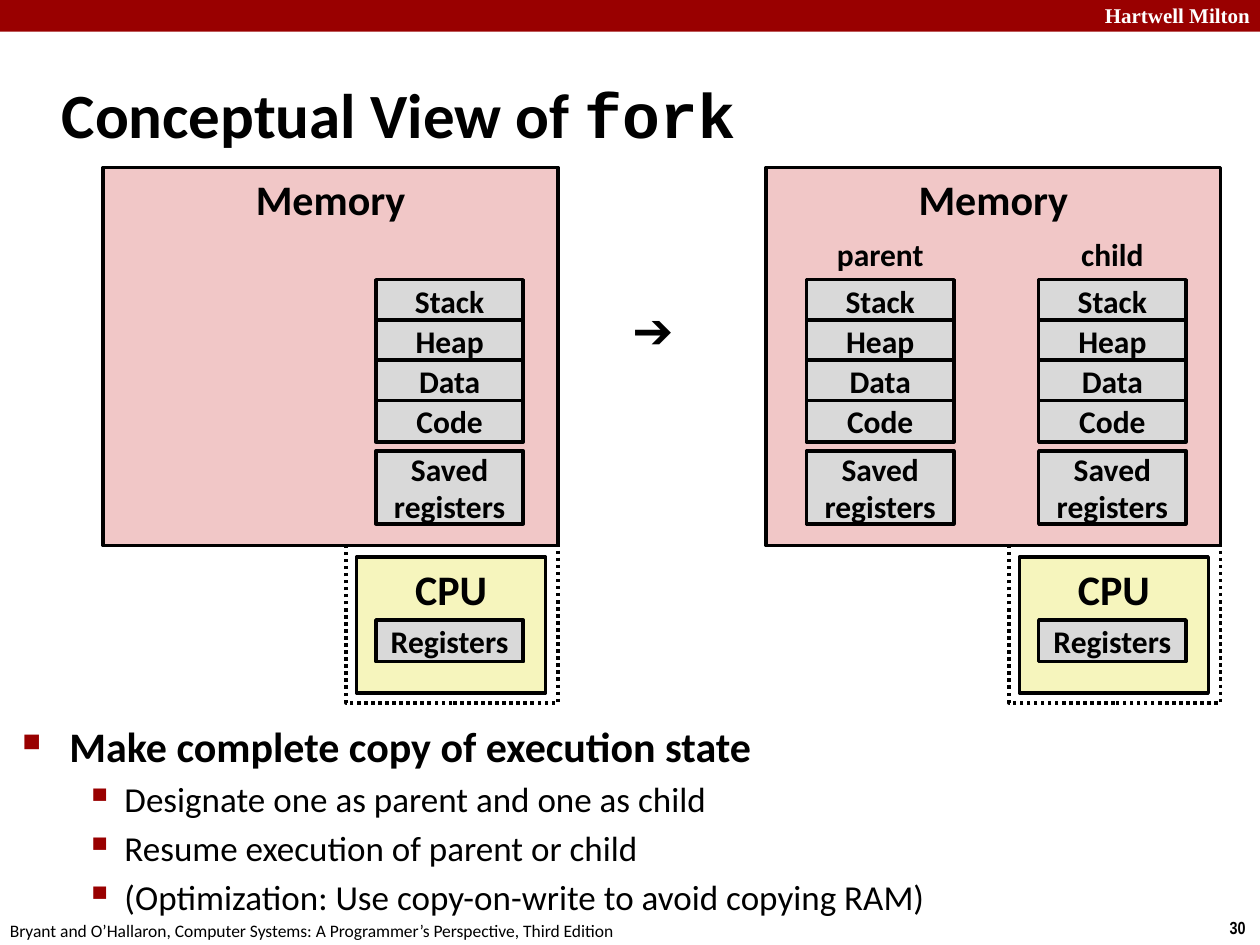
from dataclasses import dataclass

from lxml.etree import SubElement
from pptx import Presentation
from pptx.dml.color import RGBColor
from pptx.enum.dml import MSO_LINE
from pptx.enum.shapes import MSO_SHAPE
from pptx.enum.text import MSO_ANCHOR, MSO_AUTO_SIZE, PP_ALIGN
from pptx.oxml.ns import qn
from pptx.util import Cm, Pt


@dataclass(frozen=True)
class Theme:
    black: str = "000000"
    white: str = "FFFFFF"
    accent: str = "990000"
    memory: str = "F1C7C7"
    processor: str = "F6F5BD"
    segment: str = "D9D9D9"
    font: str = "Calibri"
    code_font: str = "Courier New"
    banner_font: str = "Times New Roman"
    number_font: str = "Arial Narrow"
    symbol_font: str = "Arial"
    title_size: int = 36
    arrow_size: int = 28
    heading_size: int = 24
    point_size: int = 20
    label_size: int = 18
    banner_size: int = 12
    footer_size: int = 10
    outline: int = 2


THEME = Theme()


def add_text(paragraph, text, size=THEME.label_size, font=THEME.font,
             color=THEME.black, bold=True, align=PP_ALIGN.LEFT):
    paragraph.alignment = align
    run = paragraph.add_run()
    run.text = text
    run.font.size = Pt(size)
    run.font.name = font
    run.font.bold = bold
    run.font.color.rgb = RGBColor.from_string(color)


class SlideBuilder:
    def __init__(self, slide, theme):
        self.slide = slide
        self.theme = theme

    def title(self, left, top, width, height, parts):
        shape = self.slide.shapes.title
        shape.left, shape.top = Cm(left), Cm(top)
        shape.width, shape.height = Cm(width), Cm(height)
        frame = shape.text_frame
        frame.auto_size = MSO_AUTO_SIZE.NONE
        frame.vertical_anchor = MSO_ANCHOR.MIDDLE
        for text, font in parts:
            add_text(frame.paragraphs[0], text, size=self.theme.title_size, font=font)

    def box(self, left, top, width, height, text="", fill=None, line=True,
            dotted=False, anchor=MSO_ANCHOR.MIDDLE, group=None, **style):
        shapes = (group or self.slide).shapes
        shape = shapes.add_shape(MSO_SHAPE.RECTANGLE, Cm(left), Cm(top), Cm(width), Cm(height))
        shape.shadow.inherit = False
        if fill:
            shape.fill.solid()
            shape.fill.fore_color.rgb = RGBColor.from_string(fill)
        else:
            shape.fill.background()
        if line:
            shape.line.color.rgb = RGBColor.from_string(self.theme.black)
            shape.line.width = Pt(self.theme.outline)
            if dotted:
                shape.line.dash_style = MSO_LINE.ROUND_DOT
        else:
            shape.line.fill.background()
        if text:
            shape.text_frame.word_wrap = True
            shape.text_frame.vertical_anchor = anchor
            add_text(shape.text_frame.paragraphs[0], text, align=PP_ALIGN.CENTER, **style)

    def label(self, left, top, width, height, text, wrap=True, **style):
        shape = self.slide.shapes.add_textbox(Cm(left), Cm(top), Cm(width), Cm(height))
        shape.text_frame.word_wrap = wrap
        add_text(shape.text_frame.paragraphs[0], text, **style)

    def bullet(self, paragraph, symbol, scale, margin, hanging):
        properties = paragraph._p.get_or_add_pPr()
        properties.set("marL", str(Cm(margin)))
        properties.set("indent", str(-Cm(hanging)))
        color = SubElement(properties, qn("a:buClr"))
        SubElement(color, qn("a:srgbClr"), val=self.theme.accent)
        SubElement(properties, qn("a:buSzPct"), val=str(scale * 1000))
        SubElement(properties, qn("a:buChar"), char=symbol)

    def outline(self, left, top, width, height, heading, points):
        theme = self.theme
        shape = self.slide.shapes.add_textbox(Cm(left), Cm(top), Cm(width), Cm(height))
        frame = shape.text_frame
        frame.word_wrap = True
        paragraph = frame.paragraphs[0]
        paragraph.space_before = Pt(theme.heading_size * 0.2)
        add_text(paragraph, heading, size=theme.heading_size)
        self.bullet(paragraph, "■", 60, 0.95, 0.95)
        for point in points:
            paragraph = frame.add_paragraph()
            paragraph.level = 1
            paragraph.space_before = Pt(theme.point_size * 0.2)
            add_text(paragraph, point, size=theme.point_size, bold=False)
            self.bullet(paragraph, "▪", 110, 2.06, 0.79)

    def process(self, left):
        group = self.slide.shapes.add_group_shape()
        for row, segment in enumerate(("Stack", "Heap", "Data", "Code")):
            self.box(left, 5.64 + row * 0.81, 2.97, 0.84, segment,
                     fill=self.theme.segment, group=group)
        self.box(left, 9.09, 2.97, 1.47, "Saved registers",
                 fill=self.theme.segment, group=group)

    def machine(self, left, process_offsets):
        theme = self.theme
        heading = {"size": theme.heading_size, "anchor": MSO_ANCHOR.TOP}
        self.box(left + 4.9, 4.62, 4.27, 9.55, dotted=True)
        self.box(left + 5.11, 11.23, 3.81, 2.74, "CPU", fill=theme.processor, **heading)
        self.box(left + 5.5, 12.5, 2.97, 0.84, "Registers", fill=theme.segment)
        self.box(left, 3.38, 9.17, 7.62, "Memory", fill=theme.memory, **heading)
        for offset in process_offsets:
            self.process(left + offset)


def main():
    presentation = Presentation()
    presentation.slide_width, presentation.slide_height = Cm(25.4), Cm(19.05)
    slide = presentation.slides.add_slide(presentation.slide_layouts[5])
    builder = SlideBuilder(slide, THEME)

    builder.box(0, 0, 25.4, 0.64, fill=THEME.accent, line=False)
    builder.label(21.59, -0.08, 3.86, 0.76, "Hartwell Milton", size=THEME.banner_size,
                  font=THEME.banner_font, color=THEME.white, align=PP_ALIGN.RIGHT)
    builder.label(24.54, 18.36, 0.86, 0.69, "30", wrap=False,
                  size=THEME.footer_size, font=THEME.number_font)
    builder.label(-0.05, 18.42, 12.9, 0.69,
                  "Bryant and O’Hallaron, Computer Systems: A Programmer’s Perspective, Third Edition",
                  wrap=False, size=THEME.footer_size, bold=False)
    builder.title(0.99, 1.22, 21.08, 2.11,
                  [("Conceptual View of ", THEME.font), ("fork", THEME.code_font)])
    builder.outline(0.2, 14.4, 21.95, 3.68, "Make complete copy of execution state", [
        "Designate one as parent and one as child",
        "Resume execution of parent or child",
        "(Optimization: Use copy-on-write to avoid copying RAM)",
    ])

    before, after = 2.08, 15.44
    parent, child = 0.82, 5.5
    builder.machine(before, [child])
    builder.machine(after, [parent, child])
    for offset, name in ((parent, "parent"), (child, "child")):
        builder.label(after + offset, 4.62, 2.97, 1.02, name, align=PP_ALIGN.CENTER)
    builder.label(12.5, 5.92, 1.57, 1.45, "➔", wrap=False,
                  size=THEME.arrow_size, font=THEME.symbol_font)

    presentation.save("out.pptx")


if __name__ == "__main__":
    main()
